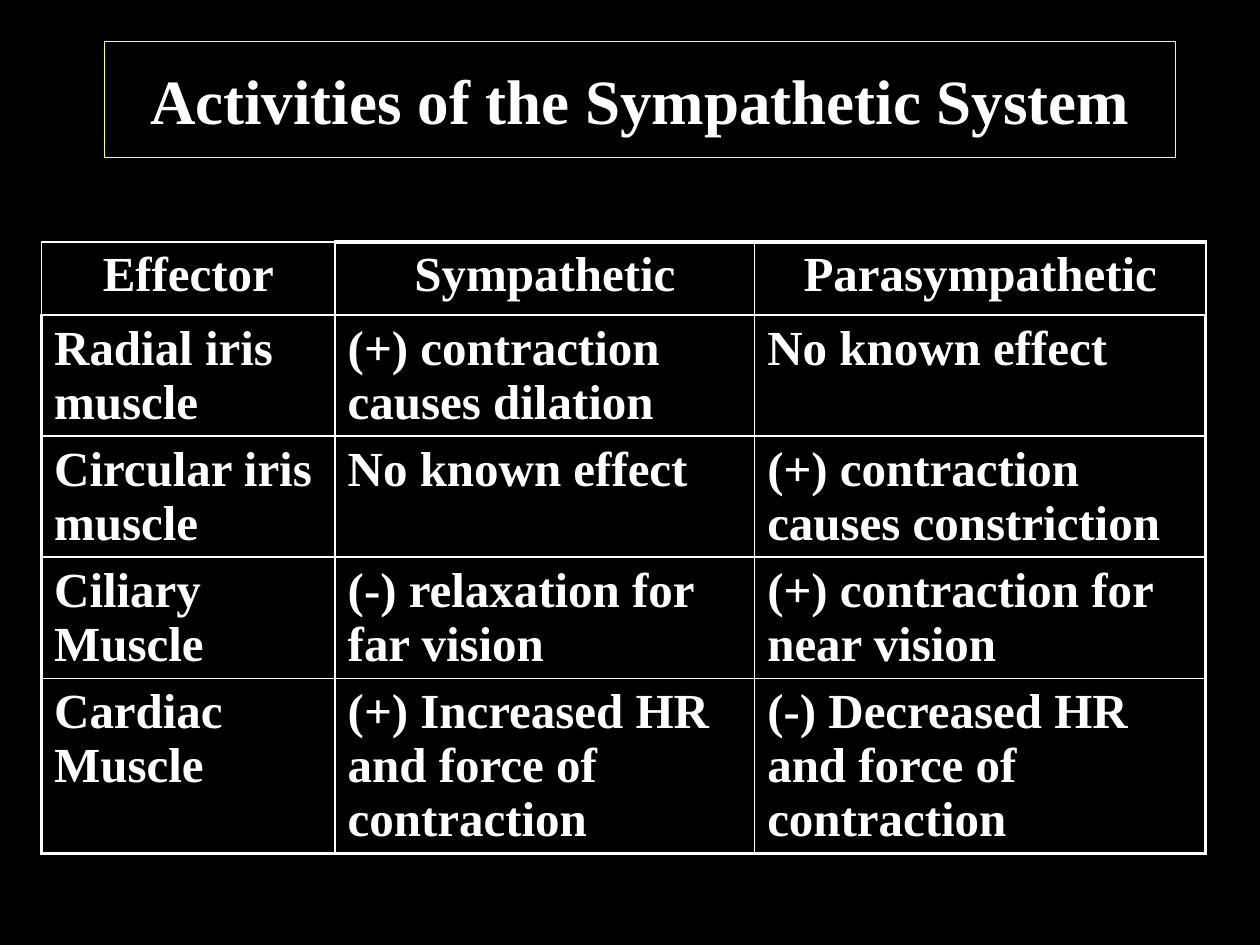
from dataclasses import dataclass

from lxml.etree import SubElement
from pptx import Presentation
from pptx.dml.color import RGBColor
from pptx.enum.text import MSO_ANCHOR, MSO_AUTO_SIZE, PP_ALIGN
from pptx.oxml.ns import qn
from pptx.slide import Slide
from pptx.table import _Cell as Cell
from pptx.text.text import TextFrame
from pptx.util import Inches, Pt


@dataclass(frozen=True)
class Theme:
    font: str = "Times New Roman"
    background: str = "000000"
    text: str = "FFFFFF"
    title_line: str = "FFFF66"
    title_size: int = 36
    table_size: int = 28
    thin: float = 1
    thick: float = 2.25


@dataclass(frozen=True)
class Effector:
    name: str
    sympathetic: str
    parasympathetic: str
    height: float


THEME = Theme()
COLUMN_WIDTHS = (2.33, 3.33, 3.58)
EFFECTORS = (
    Effector("Effector", "Sympathetic", "Parasympathetic", 0.58),
    Effector("Radial iris muscle", "(+) contraction causes dilation",
             "No known effect", 0.85),
    Effector("Circular iris muscle", "No known effect",
             "(+) contraction causes constriction", 0.9),
    Effector("Ciliary Muscle", "(-) relaxation for far vision",
             "(+) contraction for near vision", 0.9),
    Effector("Cardiac Muscle", "(+) Increased HR and force of contraction",
             "(-) Decreased HR and force of contraction", 1.15),
)


def write(frame: TextFrame, text: str, size: int, align: PP_ALIGN) -> None:
    frame.word_wrap = True
    paragraph = frame.paragraphs[0]
    paragraph.alignment = align
    run = paragraph.add_run()
    run.text = text
    run.font.name = THEME.font
    run.font.size = Pt(size)
    run.font.bold = True
    run.font.color.rgb = RGBColor.from_string(THEME.text)


def set_borders(cell: Cell, widths: dict[str, float]) -> None:
    properties = cell._tc.get_or_add_tcPr()
    for position, (side, width) in enumerate(widths.items()):
        border = SubElement(properties, qn(f"a:ln{side}"), w=str(Pt(width)))
        fill = SubElement(border, qn("a:solidFill"))
        SubElement(fill, qn("a:srgbClr"), val=THEME.text)
        properties.insert(position, border)


def border_widths(row: int, column: int) -> dict[str, float]:
    is_body = row > 0
    thick_sides = {
        "L": is_body and column == 0,
        "R": is_body and column == len(COLUMN_WIDTHS) - 1,
        "T": not is_body and column > 0,
        "B": row == len(EFFECTORS) - 1,
    }
    return {side: THEME.thick if thick else THEME.thin
            for side, thick in thick_sides.items()}


def add_title(slide: Slide, text: str) -> None:
    title = slide.shapes.title
    title.left, title.top = Inches(0.83), Inches(0.33)
    title.width, title.height = Inches(8.5), Inches(0.92)
    title.line.color.rgb = RGBColor.from_string(THEME.title_line)
    title.line.width = Pt(0.75)
    title.text_frame.auto_size = MSO_AUTO_SIZE.NONE
    title.text_frame.vertical_anchor = MSO_ANCHOR.MIDDLE
    write(title.text_frame, text, THEME.title_size, PP_ALIGN.CENTER)


def add_effector_table(slide: Slide) -> None:
    holder = slide.shapes.add_table(
        len(EFFECTORS), len(COLUMN_WIDTHS),
        Inches(0.33), Inches(1.92), Inches(9.25), Inches(5.18))
    table = holder.table
    table.first_row = table.horz_banding = False
    for column, width in zip(table.columns, COLUMN_WIDTHS):
        column.width = Inches(width)
    for row, effector in enumerate(EFFECTORS):
        table.rows[row].height = Inches(effector.height)
        align = PP_ALIGN.LEFT if row else PP_ALIGN.CENTER
        texts = (effector.name, effector.sympathetic, effector.parasympathetic)
        for column, text in enumerate(texts):
            cell = table.cell(row, column)
            cell.fill.solid()
            cell.fill.fore_color.rgb = RGBColor.from_string(THEME.background)
            set_borders(cell, border_widths(row, column))
            write(cell.text_frame, text, THEME.table_size, align)
    holder.height = Inches(5.18)


def main() -> None:
    deck = Presentation()
    deck.slide_width, deck.slide_height = Inches(10), Inches(7.5)
    slide = deck.slides.add_slide(deck.slide_layouts[5])
    slide.background.fill.solid()
    slide.background.fill.fore_color.rgb = RGBColor.from_string(THEME.background)
    add_title(slide, "Activities of the Sympathetic System")
    add_effector_table(slide)
    deck.save("out.pptx")


if __name__ == "__main__":
    main()
